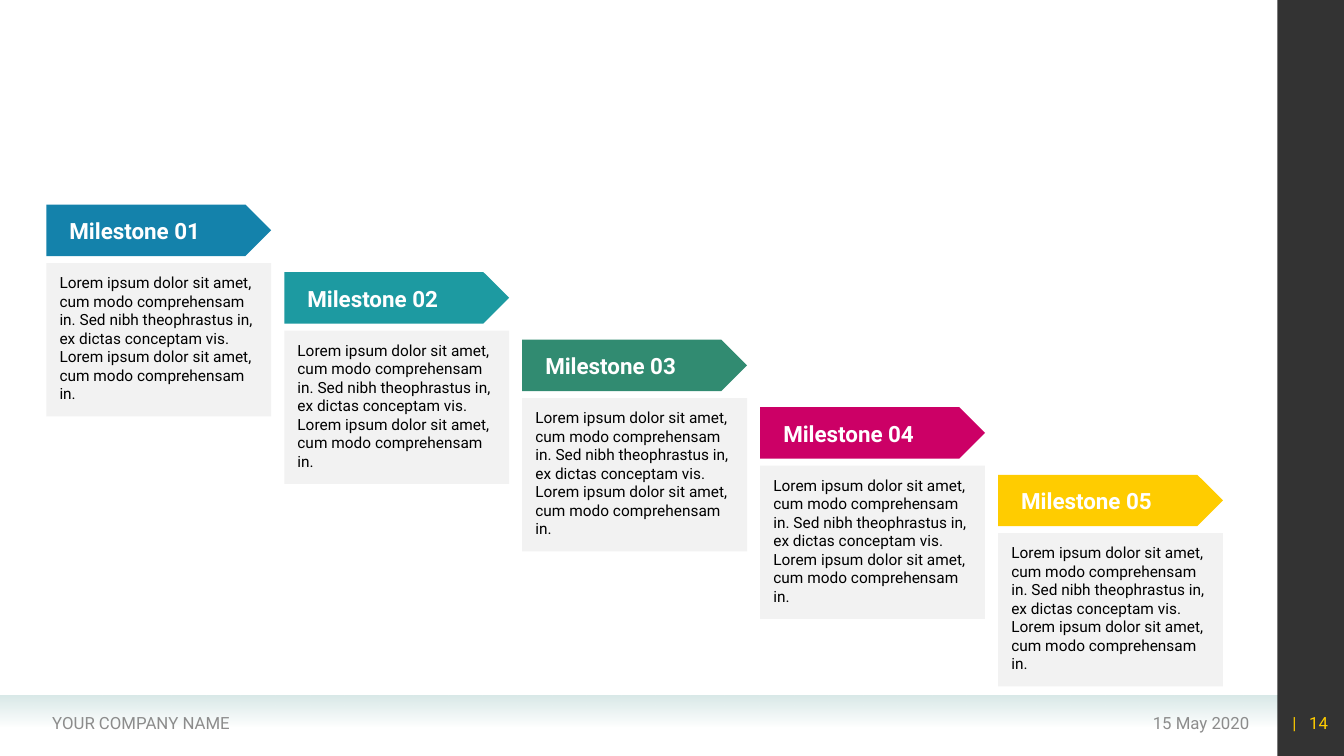
"""Build a slide with five milestones stepping down from left to right."""
from lxml.etree import SubElement
from pptx import Presentation
from pptx.dml.color import RGBColor
from pptx.enum.shapes import MSO_SHAPE
from pptx.enum.text import MSO_ANCHOR, MSO_AUTO_SIZE, PP_ALIGN
from pptx.oxml.ns import qn
from pptx.util import Inches, Pt

WHITE = RGBColor(0xFF, 0xFF, 0xFF)
BLACK = RGBColor(0x00, 0x00, 0x00)
GREY = RGBColor(0x8C, 0x8C, 0x8C)
PANEL = RGBColor(0xF2, 0xF2, 0xF2)
MIST = RGBColor(0xD9, 0xE9, 0xE8)
YELLOW = RGBColor(0xFF, 0xCC, 0x00)
MILESTONE_COLOURS = [
    RGBColor(0x14, 0x82, 0xAB),
    RGBColor(0x1D, 0x9A, 0xA1),
    RGBColor(0x31, 0x8B, 0x71),
    RGBColor(0xCC, 0x00, 0x66),
    YELLOW,
]
DESCRIPTION = (
    "Lorem ipsum dolor sit amet, cum modo comprehensam in. "
    "Sed nibh theophrastus in, ex dictas conceptam vis. "
    "Lorem ipsum dolor sit amet, cum modo comprehensam in."
)

FIRST_LEFT, FIRST_TOP = 0.46, 2.03
STEP_RIGHT, STEP_DOWN = 2.36, 0.67
CARD_WIDTH, ARROW_HEIGHT, PANEL_HEIGHT = 2.23, 0.51, 1.52
PANEL_OFFSET = 0.58
MAIN_WIDTH, SIDEBAR_WIDTH = 12.67, 0.67
FOOTER_TOP, FOOTER_HEIGHT = 6.97, 0.4


def add_block(shapes, preset, box, colour):
    block = shapes.add_shape(preset, *map(Inches, box))
    block.shadow.inherit = False
    block.fill.solid()
    block.fill.fore_color.rgb = colour
    block.line.fill.background()
    return block


def add_label(shapes, pieces, box, font_format, frame_format):
    frame = shapes.add_textbox(*map(Inches, box)).text_frame
    frame.word_wrap = True
    for name, value in frame_format.items():
        setattr(frame, name, value)
    for piece in pieces:
        run = frame.paragraphs[0].add_run()
        run.text = piece
        for name, value in font_format.items():
            setattr(run.font, name, value)
        run.font.color.rgb = WHITE if font_format.get("bold") else BLACK
    return frame.paragraphs[0]


presentation = Presentation()
presentation.slide_width = Inches(13.33)
presentation.slide_height = Inches(7.5)
slide = presentation.slides.add_slide(presentation.slide_layouts[6])

footer_band = add_block(slide.shapes, MSO_SHAPE.RECTANGLE, (0, 6.9, MAIN_WIDTH, 0.31), MIST)
footer_band.fill.gradient()
footer_band.fill.gradient_angle = 270
for stop in footer_band.fill.gradient_stops:
    stop.color.rgb = MIST
sidebar = add_block(slide.shapes, MSO_SHAPE.RECTANGLE, (MAIN_WIDTH, 0, SIDEBAR_WIDTH, 7.5), BLACK)
for tinted, opacity in ((footer_band, 0), (sidebar, 80)):
    last_colour = list(tinted.element.iter(qn("a:srgbClr")))[-1]
    SubElement(last_colour, qn("a:alpha"), val=str(opacity * 1000))

footer_font = {"name": "Roboto", "size": Pt(12)}
footer_frame = {"vertical_anchor": MSO_ANCHOR.MIDDLE}
for pieces, left, width, alignment, colour in (
    (["15 May 2020"], 9.1, 3.39, PP_ALIGN.RIGHT, GREY),
    (["YOUR COMPANY NAME"], 0.42, 4.9, PP_ALIGN.LEFT, GREY),
    (["| ", "14"], 12.6, SIDEBAR_WIDTH, PP_ALIGN.RIGHT, YELLOW),
):
    footer = add_label(slide.shapes, pieces, (left, FOOTER_TOP, width, FOOTER_HEIGHT),
                       footer_font, footer_frame)
    footer.alignment = alignment
    for run in footer.runs:
        run.font.color.rgb = colour
footer.runs[0].font._element.set("spc", "300")

title_font = {"name": "Roboto", "size": Pt(16), "bold": True}
title_frame = {"vertical_anchor": MSO_ANCHOR.BOTTOM, "auto_size": MSO_AUTO_SIZE.SHAPE_TO_FIT_TEXT}
body_font = {"name": "Roboto", "size": Pt(11)}
body_frame = {
    "auto_size": MSO_AUTO_SIZE.SHAPE_TO_FIT_TEXT,
    "margin_left": Inches(0.04),
    "margin_right": Inches(0.04),
    "margin_top": Inches(0.02),
    "margin_bottom": Inches(0.02),
}
for step, colour in enumerate(MILESTONE_COLOURS):
    left = FIRST_LEFT + step * STEP_RIGHT
    top = FIRST_TOP + step * STEP_DOWN
    panel_top = top + PANEL_OFFSET
    milestone = slide.shapes.add_group_shape().shapes
    add_block(milestone, MSO_SHAPE.PENTAGON, (left, top, CARD_WIDTH, ARROW_HEIGHT), colour)
    add_block(milestone, MSO_SHAPE.RECTANGLE, (left, panel_top, CARD_WIDTH, PANEL_HEIGHT), PANEL)
    add_label(milestone, [f"Milestone {step + 1:02}"], (left + 0.13, top + 0.07, 1.78, 0.37),
              title_font, title_frame)
    description = add_label(milestone, [DESCRIPTION], (left + 0.09, panel_top + 0.08, 2.05, 1.34),
                            body_font, body_frame)
    description.space_after = Pt(7.6)

presentation.save("out.pptx")
